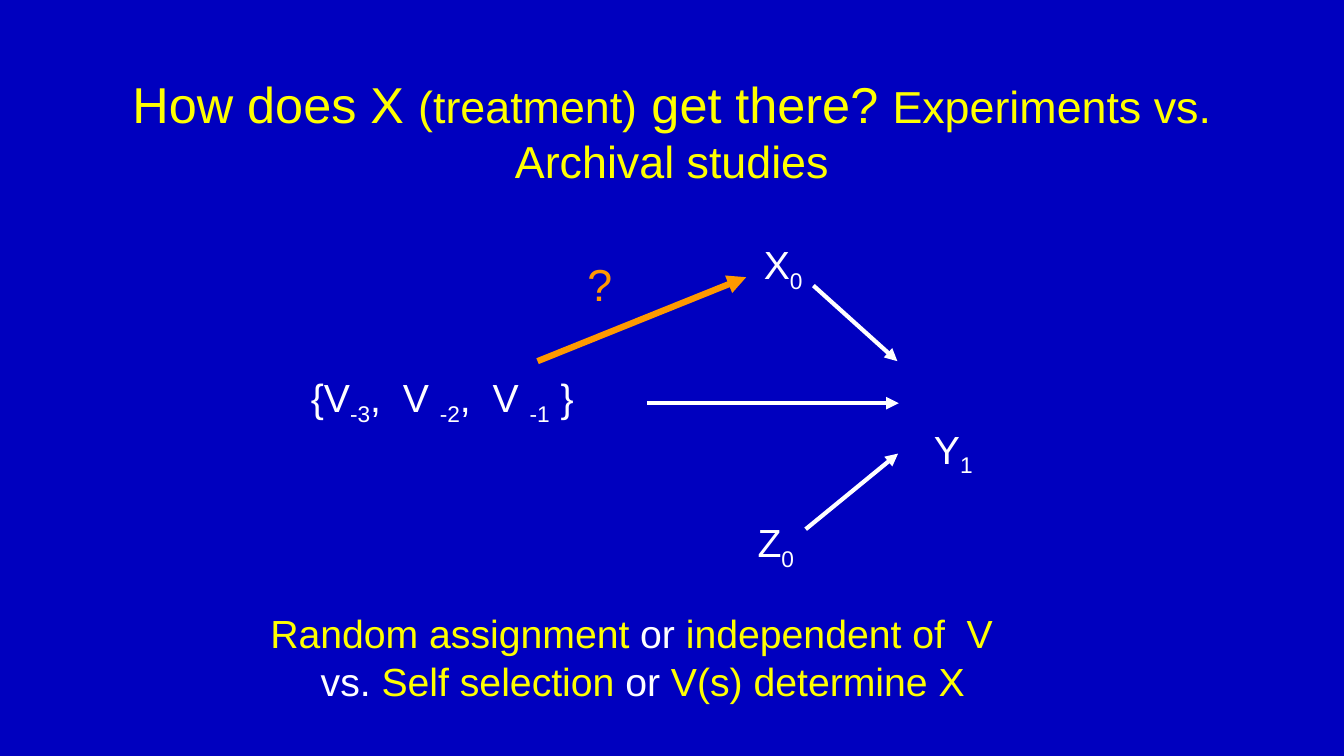
import pptx
import pptx.dml.color
import pptx.enum.shapes
import pptx.enum.text
import pptx.oxml
import pptx.oxml.ns
import pptx.util

Pt = pptx.util.Pt
RGB = pptx.dml.color.RGBColor.from_string
COLORS = {"blue": "0000BF", "yellow": "FFFF00", "white": "FFFFFF", "orange": "FF9900"}

deck = pptx.Presentation()
deck.slide_width, deck.slide_height = Pt(960), Pt(540)
slide = deck.slides.add_slide(deck.slide_layouts[6])
slide.background.fill.solid()
slide.background.fill.fore_color.rgb = RGB(COLORS["blue"])


def add_text(left, top, width, height, lines, wrap=False):
    """Each line is a list of runs: (text, size, color, is_subscript)."""
    frame = slide.shapes.add_textbox(Pt(left), Pt(top), Pt(width), Pt(height)).text_frame
    frame.word_wrap = wrap
    for number, runs in enumerate(lines):
        paragraph = frame.add_paragraph() if number else frame.paragraphs[0]
        for text, size, color, is_subscript in runs:
            run = paragraph.add_run()
            run.text = text
            run.font.name = "Arial"
            run.font.size = Pt(size)
            run.font.color.rgb = RGB(COLORS[color])
            if is_subscript:
                run.font._element.set("baseline", "-25000")
    return frame


def add_arrow(x1, y1, x2, y2, color, weight):
    arrow = slide.shapes.add_connector(
        pptx.enum.shapes.MSO_CONNECTOR.STRAIGHT, Pt(x1), Pt(y1), Pt(x2), Pt(y2))
    arrow.line.color.rgb = RGB(COLORS[color])
    arrow.line.width = Pt(weight)
    head = pptx.oxml.parse_xml(
        f'<a:tailEnd {pptx.oxml.ns.nsdecls("a")} type="triangle"/>')
    arrow.line._get_or_add_ln().append(head)
    arrow._element.spPr.append(
        pptx.oxml.parse_xml(f'<a:effectLst {pptx.oxml.ns.nsdecls("a")}/>'))


# Title
title = add_text(72, 48, 816, 90, [[
    ("How does X ", 36, "yellow", False),
    ("(treatment)", 32, "yellow", False),
    (" get there? ", 36, "yellow", False),
    ("Experiments vs. Archival studies", 32, "yellow", False),
]], wrap=True)
title.vertical_anchor = pptx.enum.text.MSO_ANCHOR.MIDDLE
title.paragraphs[0].alignment = pptx.enum.text.PP_ALIGN.CENTER

# Variables: plain and subscript pieces alternate
variables = [
    (215, 263, 210, ["{V", "-3", ",  V ", "-2", ",  V ", "-1", " }"]),
    (660, 300, 54, ["Y", "1"]),
    (538.5, 168, 44, ["X", "0"]),
    (534, 367, 43, ["Z", "0"]),
]
for left, top, width, pieces in variables:
    add_text(left, top, width, 41, [
        [(piece, 28, "white", index % 2 == 1) for index, piece in enumerate(pieces)]])

# Causal arrows
effects_on_y = [(462, 288, 642, 288), (581, 204, 641, 258), (575.5, 378, 641.5, 324)]
for ends in effects_on_y:
    add_arrow(*ends, "white", 3)

# Open question: does V determine X?
add_arrow(384, 258, 533, 198, "orange", 4.5)
add_text(412.5, 179.5, 32, 46, [[("?", 32, "orange", False)]])

# Conclusion
conclusion = [
    [("Random assignment", "yellow"), (" or ", "white"), ("independent of  V", "yellow")],
    [("\tvs. ", "white"), ("Self selection", "yellow"), (" or ", "white"),
     ("V(s) determine X", "yellow")],
]
add_text(186, 432, 630, 74, [
    [(text, 28, color, False) for text, color in line] for line in conclusion], wrap=True)

deck.save("out.pptx")
